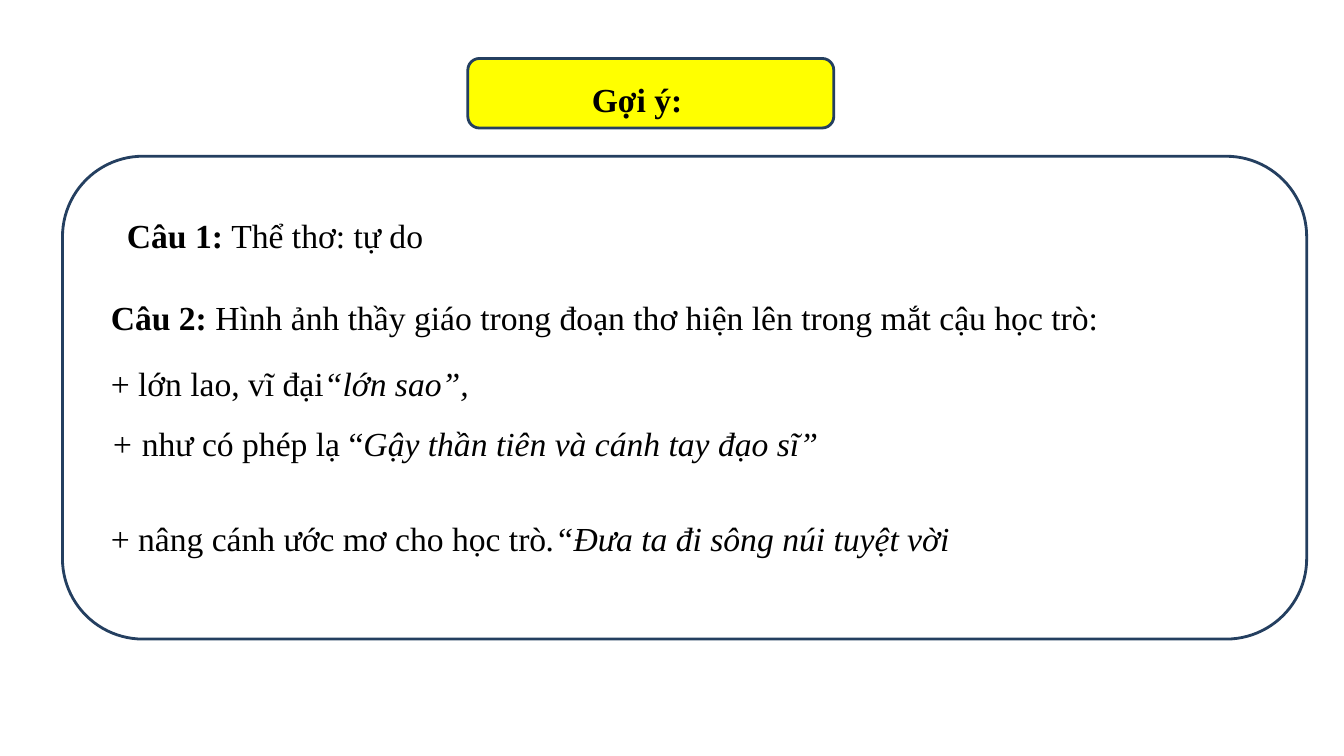
from pptx import Presentation
from pptx.dml.color import RGBColor
from pptx.enum.shapes import MSO_SHAPE
from pptx.enum.text import MSO_ANCHOR, MSO_AUTO_SIZE, PP_ALIGN
from pptx.util import Inches, Pt

ROUNDED = MSO_SHAPE.ROUNDED_RECTANGLE
LEFT, JUSTIFY = PP_ALIGN.LEFT, PP_ALIGN.JUSTIFY
COLOURS = {"banner": "FFFF00", "outline": "243F60", "text": "000000"}
FONT = {"name": "Times New Roman", "size": Pt(24)}
FRAME = {
    "word_wrap": True,
    "auto_size": MSO_AUTO_SIZE.SHAPE_TO_FIT_TEXT,
    "vertical_anchor": MSO_ANCHOR.TOP,
}
STYLES = {
    "plain": {"bold": False, "italic": False},
    "bold": {"bold": True, "italic": False},
    "italic": {"bold": False, "italic": True},
}

PANELS = [
    ((4.64, 0.58, 3.63, 0.69), "banner"),
    ((0.62, 1.55, 12.34, 4.79), None),
]
TITLE = ((5.77, 0.33, 2.05, 0.79), JUSTIFY, [(2, [("Gợi ý:", "bold")])])
ANSWERS = [
    ((1.16, 1.68, 6.66, 0.79), JUSTIFY, [
        (2, [("Câu 1: ", "bold"), ("Thể thơ: tự do", "plain")]),
    ]),
    ((1, 2.5, 11.52, 0.79), LEFT, [
        (2, [
            ("Câu 2: ", "bold"),
            ("Hình ảnh thầy giáo trong đoạn thơ hiện lên trong mắt cậu học trò:", "plain"),
        ]),
    ]),
    ((1, 3.49, 11.52, 2), LEFT, [
        (1.15, [("+ lớn lao, vĩ đại", "plain"), ("“lớn sao”,", "italic")]),
        (1.15, [
            ("+ ", "italic"),
            ("như có phép lạ “", "plain"),
            ("Gậy thần tiên và cánh tay đạo sĩ”", "italic"),
        ]),
        (2, [
            ("+ nâng cánh ước mơ cho học trò", "plain"),
            (".“Đưa ta đi sông núi tuyệt vời", "italic"),
        ]),
    ]),
]


def colour(name):
    return RGBColor.from_string(COLOURS[name])


def set_all(target, values):
    for name, value in values.items():
        setattr(target, name, value)


def add_panel(slide, box, fill):
    shape = slide.shapes.add_shape(ROUNDED, *map(Inches, box))
    shape.shadow.inherit = False
    if fill:
        shape.fill.solid()
        shape.fill.fore_color.rgb = colour(fill)
    else:
        shape.fill.background()
    shape.line.color.rgb = colour("outline")
    shape.line.width = Pt(2)


def write_text(shape, alignment, paragraphs):
    frame = shape.text_frame
    set_all(frame, FRAME)
    for index, (spacing, runs) in enumerate(paragraphs):
        paragraph = frame.add_paragraph() if index else frame.paragraphs[0]
        set_all(paragraph, {
            "alignment": alignment,
            "line_spacing": spacing,
            "space_before": Pt(0),
            "space_after": Pt(10),
        })
        for text, style in runs:
            run = paragraph.add_run()
            run.text = text
            set_all(run.font, {**FONT, **STYLES[style]})
            run.font.color.rgb = colour("text")


def main():
    presentation = Presentation()
    presentation.slide_width = Inches(13.33)
    presentation.slide_height = Inches(7.5)
    slide = presentation.slides.add_slide(presentation.slide_layouts[5])

    for box, fill in PANELS:
        add_panel(slide, box, fill)

    title_box, alignment, paragraphs = TITLE
    title = slide.shapes.title
    set_all(title, dict(zip(("left", "top", "width", "height"), map(Inches, title_box))))
    write_text(title, alignment, paragraphs)
    title.element.getparent().append(title.element)

    for box, alignment, paragraphs in ANSWERS:
        write_text(slide.shapes.add_textbox(*map(Inches, box)), alignment, paragraphs)

    presentation.save("out.pptx")


if __name__ == "__main__":
    main()
